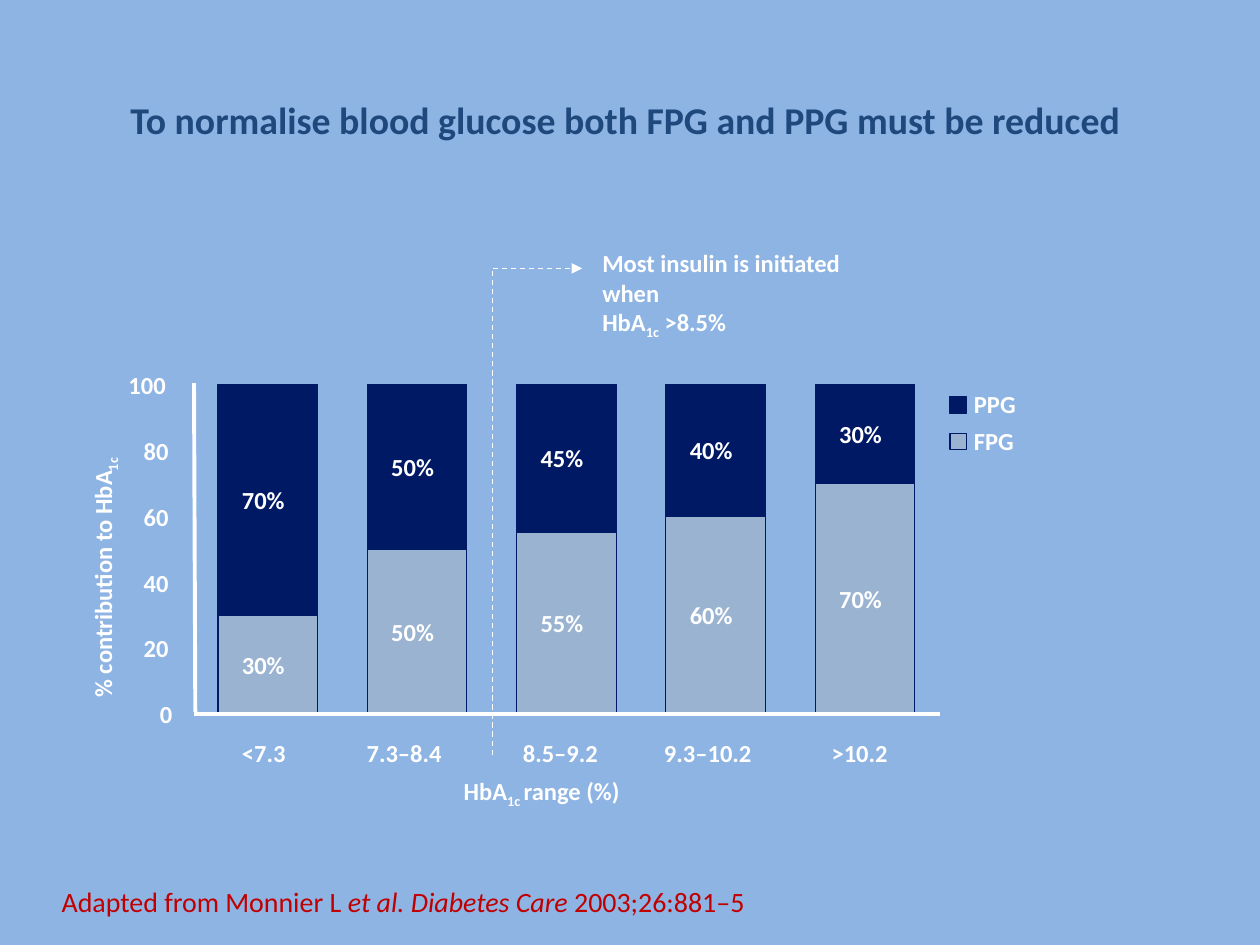
"""Build the slide on FPG and PPG contributions to HbA1c."""
from pptx import Presentation
from pptx.dml.color import RGBColor
from pptx.enum.dml import MSO_LINE
from pptx.enum.shapes import MSO_CONNECTOR, MSO_SHAPE
from pptx.enum.text import MSO_ANCHOR, MSO_AUTO_SIZE, PP_ALIGN
from pptx.oxml.ns import qn
from pptx.util import Inches, Pt
from lxml import etree

RECTANGLE = MSO_SHAPE.RECTANGLE
STRAIGHT = MSO_CONNECTOR.STRAIGHT
DASH = MSO_LINE.DASH
MIDDLE = MSO_ANCHOR.MIDDLE
CENTER = PP_ALIGN.CENTER
GROW = MSO_AUTO_SIZE.SHAPE_TO_FIT_TEXT
FIXED = MSO_AUTO_SIZE.NONE

COLORS = {
    "background": "8EB4E3",
    "title": "1F497D",
    "citation": "C00000",
    "label": "FFFFFF",
    "PPG": "001965",
    "FPG": "B2B2B2",
}
FPG_ALPHA = "35000"
TEXT_HEIGHT = 0.24

prs = Presentation()
prs.slide_width = Inches(10)
prs.slide_height = Inches(7.5)
slide = prs.slides.add_slide(prs.slide_layouts[6])
slide.background.fill.solid()
slide.background.fill.fore_color.rgb = RGBColor.from_string(COLORS["background"])


def add_text(runs, left, top, width, height=TEXT_HEIGHT, size=14, color="label", bold=True, wrap=False):
    box = slide.shapes.add_textbox(Inches(left), Inches(top), Inches(width), Inches(height))
    frame = box.text_frame
    frame.margin_left = frame.margin_right = frame.margin_top = frame.margin_bottom = 0
    frame.word_wrap = wrap
    frame.auto_size = GROW
    paragraph = frame.paragraphs[0]
    for words, style in runs:
        if style == "new line":
            paragraph.add_line_break()
        run = paragraph.add_run()
        run.text = words
        run.font.name = "Calibri"
        run.font.size = Pt(size)
        run.font.bold = bold
        run.font.color.rgb = RGBColor.from_string(COLORS[color])
        if style == "italic":
            run.font.italic = True
        if style == "subscript":
            run.font._element.set("baseline", "-25000")
    return box


def add_block(series, left, top, width, height):
    block = slide.shapes.add_shape(RECTANGLE, Inches(left), Inches(top), Inches(width), Inches(height))
    block.shadow.inherit = False
    block.fill.solid()
    block.fill.fore_color.rgb = RGBColor.from_string(COLORS[series])
    block.line.color.rgb = RGBColor.from_string(COLORS["PPG"])
    block.line.width = Pt(0.63)
    if series == "FPG":
        fill_color = block._element.spPr.find(qn("a:solidFill"))[0]
        etree.SubElement(fill_color, qn("a:alpha")).set("val", FPG_ALPHA)


title = add_text([("To normalise blood glucose both FPG and PPG must be reduced", None)],
                 0.52, 0.51, 8.89, 0.88, size=21.6, color="title", wrap=True)
title.text_frame.auto_size = FIXED
title.text_frame.vertical_anchor = MIDDLE
title.text_frame.paragraphs[0].alignment = CENTER

citation = add_text([("Adapted from Monnier L ", None), ("et al. Diabetes Care ", "italic"),
                     ("2003;26:881–5", None)],
                    0.28, 7.06, 6.38, 0.23, size=16, color="citation", bold=False, wrap=True)
citation_line = citation.text_frame.paragraphs[0]
citation_line.line_spacing = 0.85
citation_line._p.get_or_add_pPr().set("marL", str(Inches(0.21)))

BAR_LEFT, BAR_STEP, BAR_WIDTH = 1.73, 1.185, 0.79
BAR_TOP, BAR_HEIGHT = 3.05, 2.62
ranges = [
    ("<7.3", 30, 1.92, 0.35),
    ("7.3–8.4", 50, 2.91, 0.6),
    ("8.5–9.2", 55, 4.15, 0.6),
    ("9.3–10.2", 60, 5.27, 0.7),
    (">10.2", 70, 6.6, 0.45),
]
for index, (hba1c_range, fpg, range_left, range_width) in enumerate(ranges):
    bar_left = BAR_LEFT + index * BAR_STEP
    segment_top = BAR_TOP
    for series, share in (("PPG", 100 - fpg), ("FPG", fpg)):
        segment_height = BAR_HEIGHT * share / 100
        add_block(series, bar_left, segment_top, BAR_WIDTH, segment_height)
        add_text([(f"{share}%", None)], bar_left + 0.19,
                 segment_top + (segment_height - TEXT_HEIGHT) / 2, 0.34)
        segment_top += segment_height
    add_text([(hba1c_range, None)], range_left, 5.86, range_width)

for index, (tick_left, tick_width) in enumerate([(1.27, 0.1)] + [(1.14, 0.2)] * 4 + [(1.02, 0.3)]):
    add_text([(str(index * 20), None)], tick_left, 5.55 - index * 0.522, tick_width)

for series, key_top in (("PPG", 3.15), ("FPG", 3.44)):
    add_block(series, 7.54, key_top, 0.13, 0.13)
    add_text([(series, None)], 7.73, key_top - 0.06, 0.36)

for x1, y1, x2, y2, weight, dashed, arrow in [
    (1.54, 5.67, 7.46, 5.67, 2.25, False, False),
    (1.54, 3.04, 1.55, 5.65, 2.25, False, False),
    (3.91, 5.99, 3.91, 2.13, 0.75, True, False),
    (3.91, 2.13, 4.62, 2.13, 0.75, True, True),
]:
    rule = slide.shapes.add_connector(STRAIGHT, Inches(x1), Inches(y1), Inches(x2), Inches(y2))
    rule.line.color.rgb = RGBColor.from_string(COLORS["label"])
    rule.line.width = Pt(weight)
    if dashed:
        rule.line.dash_style = DASH
    if arrow:
        etree.SubElement(rule.line._get_or_add_ln(), qn("a:tailEnd")).set("type", "triangle")
    etree.SubElement(rule._element.spPr, qn("a:effectLst"))

add_text([("HbA", None), ("1c ", "subscript"), ("range (%)", None)], 3.68, 6.16, 1.27)
contribution = add_text([("% contribution to HbA", None), ("1c", "subscript")],
                        -0.93, 3.67, 3.49, wrap=True)
contribution.rotation = 270
add_text([("Most insulin is initiated when ", None), ("HbA", "new line"), ("1c", "subscript"),
          (" >8.5%", None)], 4.78, 1.97, 2.05, 0.71, wrap=True)

prs.save("out.pptx")
